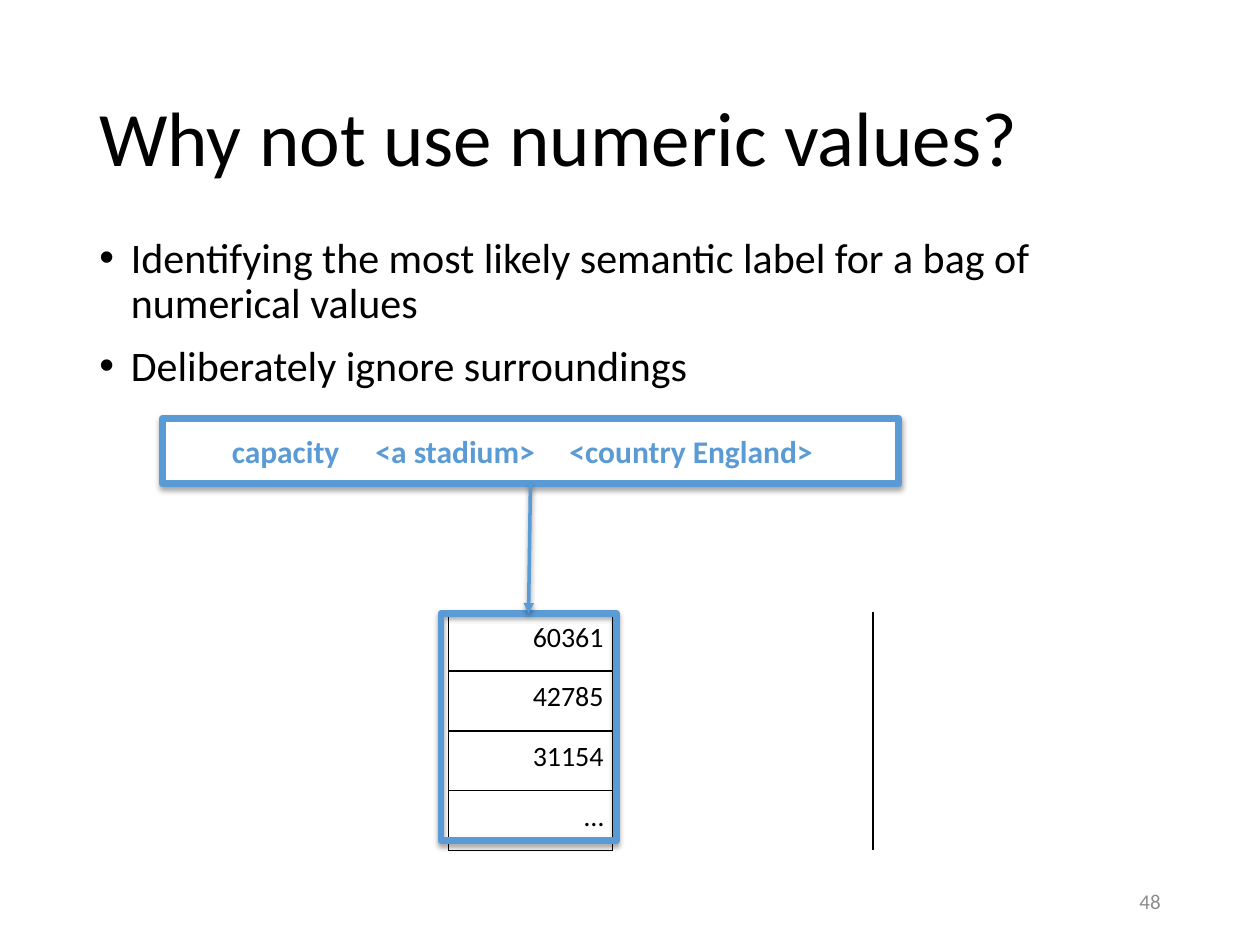
from lxml.etree import SubElement
from pptx import Presentation
from pptx.dml.color import RGBColor
from pptx.enum.shapes import MSO_CONNECTOR, MSO_SHAPE
from pptx.enum.text import MSO_ANCHOR, PP_ALIGN
from pptx.oxml.ns import qn
from pptx.util import Inches, Pt

COLORS = {"text": "000000", "accent": "5B9BD5", "paper": "FFFFFF", "number": "8C8C8C"}
COLS, ROWS = 100, 75
FONT = "Calibri"
NO_GRID_STYLE = "{2D5ABB26-0587-4C30-8999-92F81FD0307C}"
VALUES = ["60361", "42785", "31154", "…"]
BULLETS = [
    "Identifying the most likely semantic label for a bag of numerical values",
    "Deliberately ignore surroundings",
]


def rgb(name):
    """Return the named colour."""
    return RGBColor.from_string(COLORS[name])


def grid(*units):
    """Turn grid units, 100 columns by 75 rows, into lengths."""
    return [Inches(u * 10 / COLS) for u in units]


def add_run(p, text, size, color="text", bold=False):
    """Append one styled run to a paragraph."""
    r = p.add_run()
    r.text = text
    r.font.name, r.font.size, r.font.bold = FONT, Pt(size), bold
    r.font.color.rgb = rgb(color)


def add_tabs(p, stops):
    """Set left tab stops, given in inches."""
    tabs = SubElement(p._p.get_or_add_pPr(), qn("a:tabLst"))
    for stop in stops:
        SubElement(tabs, qn("a:tab"), pos=str(Inches(stop)), algn="l")


def add_bullet(p):
    """Give a paragraph a hanging round bullet."""
    pPr = p._p.get_or_add_pPr()
    pPr.set("marL", str(Inches(0.25)))
    pPr.set("indent", str(-Inches(0.25)))
    SubElement(pPr, qn("a:buFont"), typeface="Arial")
    SubElement(pPr, qn("a:buChar"), char="•")


def add_text(s, area, lines, size, color="text", anchor=MSO_ANCHOR.MIDDLE,
             align=PP_ALIGN.LEFT, spacing=None, bullets=False):
    """Add a wrapped text box with one paragraph per line."""
    tf = s.shapes.add_textbox(*grid(*area)).text_frame
    tf.word_wrap, tf.vertical_anchor = True, anchor
    for i, line in enumerate(lines):
        p = tf.add_paragraph() if i else tf.paragraphs[0]
        if bullets:
            add_bullet(p)
        p.alignment, p.line_spacing = align, spacing
        if i:
            p.space_before = Pt(10)
        add_run(p, line, size, color)


def add_shadow(effects, alpha, distance):
    """Add a soft downward shadow to an effect list."""
    shadow = SubElement(effects, qn("a:outerShdw"), blurRad=str(Pt(3)),
                        dist=str(Pt(distance)), dir="5400000", rotWithShape="0")
    black = SubElement(shadow, qn("a:srgbClr"), val=COLORS["text"])
    SubElement(black, qn("a:alpha"), val=str(alpha * 1000))


def add_frame(s, area, fill=None):
    """Add a thick outlined rectangle with a shadow."""
    sp = s.shapes.add_shape(MSO_SHAPE.RECTANGLE, *grid(*area))
    if fill:
        sp.fill.solid()
        sp.fill.fore_color.rgb = rgb(fill)
    else:
        sp.fill.background()
    sp.line.color.rgb, sp.line.width = rgb("accent"), Pt(4)
    sp.shadow.inherit = False
    add_shadow(sp._element.spPr.find(qn("a:effectLst")), 35, 1.8)
    return sp


def add_label(s, area, parts, stops):
    """Add a filled frame holding tabbed bold text."""
    sp = add_frame(s, area, "paper")
    tf = sp.text_frame
    tf.word_wrap, tf.vertical_anchor = True, MSO_ANCHOR.MIDDLE
    tf.margin_left = Inches(0.55)
    tf.margin_top = tf.margin_right = tf.margin_bottom = Inches(0.05)
    p = tf.paragraphs[0]
    add_tabs(p, stops)
    p.alignment = PP_ALIGN.LEFT
    add_run(p, "\t".join(parts), 18, "accent", True)
    return sp


def add_arrow(s, start, end):
    """Join the bottom of one shape to the top of another."""
    cn = s.shapes.add_connector(MSO_CONNECTOR.STRAIGHT, 0, 0, 0, 0)
    cn.begin_connect(start, 2)
    cn.end_connect(end, 0)
    cn.line.color.rgb, cn.line.width = rgb("accent"), Pt(2)
    SubElement(cn.line._get_or_add_ln(), qn("a:tailEnd"), type="triangle")
    add_shadow(SubElement(cn._element.spPr, qn("a:effectLst")), 38, 1.6)


def set_borders(cell, sides):
    """Draw thin black borders on the given sides of a cell."""
    for side in sides:
        ln = SubElement(cell._tc.get_or_add_tcPr(), qn(f"a:ln{side}"), w=str(Pt(1)))
        fill = SubElement(ln, qn("a:solidFill"))
        SubElement(fill, qn("a:srgbClr"), val=COLORS["text"])


def add_table(s, area, widths, values):
    """Add a table whose second column lists bordered values."""
    frame = s.shapes.add_table(len(values) + 1, len(widths), *grid(*area))
    table = frame.table
    table.first_row = table.horz_banding = False
    table._tbl.tblPr.find(qn("a:tableStyleId")).text = NO_GRID_STYLE
    for column, width in zip(table.columns, grid(*widths)):
        column.width = width
    for i in range(len(values) + 1):
        for j, sides in enumerate(["R", "LRTB", "L", ""]):
            cell = table.cell(i, j)
            set_borders(cell, sides if i else "B" * (j == 1))
            cell.fill.background()
            if i and j == 1:
                cell.margin_left = cell.margin_right = Inches(0.07)
                cell.margin_top = cell.margin_bottom = Inches(0.07)
                p = cell.text_frame.paragraphs[0]
                p.alignment = PP_ALIGN.RIGHT
                add_run(p, values[i - 1], 16)


def main():
    """Build the slide and save it."""
    prs = Presentation()
    prs.slide_width, prs.slide_height = grid(COLS, ROWS)
    s = prs.slides.add_slide(prs.slide_layouts[6])
    add_table(s, (7.1, 43.8, 82.9, 23.7), (28.5, 13, 20.7, 20.7), VALUES)
    values = add_frame(s, (35, 48.7, 13.9, 18))
    label = add_label(s, (12.9, 33.2, 58.4, 5.2),
                      ["capacity", "<a stadium>", "<country England>"], [1.14, 2.68])
    add_arrow(s, label, values)
    add_text(s, (6.9, 4, 86.2, 14.5), ["Why not use numeric values?"], 44, spacing=0.9)
    add_text(s, (70.6, 69.5, 22.5, 4), ["48"], 12, "number", align=PP_ALIGN.RIGHT)
    add_text(s, (6.9, 18.3, 86.2, 14.1), BULLETS, 24, anchor=MSO_ANCHOR.TOP,
             spacing=0.9, bullets=True)
    prs.save("out.pptx")


if __name__ == "__main__":
    main()
